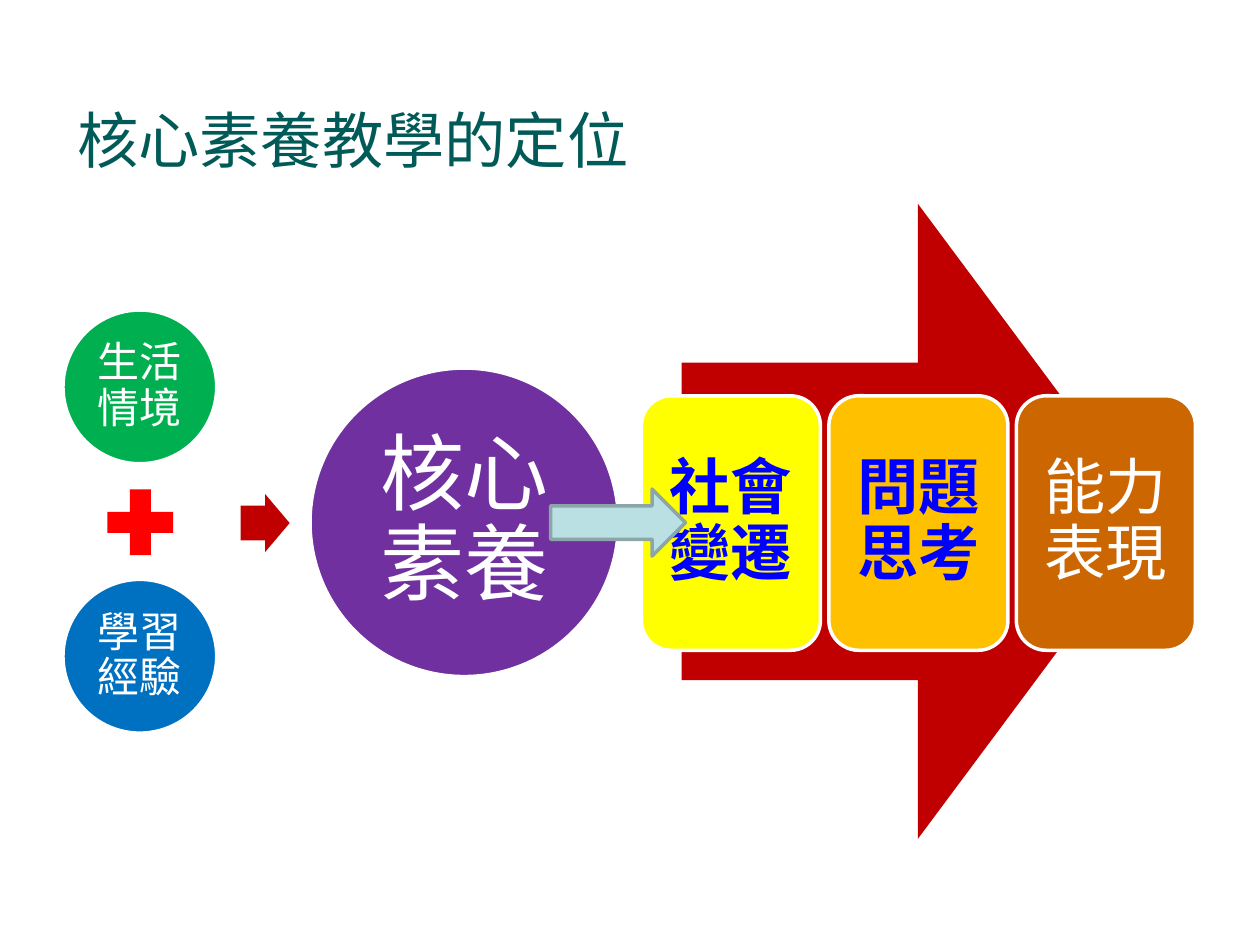
from pptx import Presentation
from pptx.dml.color import RGBColor
from pptx.enum.shapes import MSO_SHAPE
from pptx.enum.text import MSO_ANCHOR, PP_ALIGN
from pptx.util import Cm, Pt

OVAL = MSO_SHAPE.OVAL
ARROW = MSO_SHAPE.RIGHT_ARROW
PLUS = MSO_SHAPE.MATH_PLUS
CARD = MSO_SHAPE.ROUNDED_RECTANGLE
MIDDLE = MSO_ANCHOR.MIDDLE
LEFT, CENTER = PP_ALIGN.LEFT, PP_ALIGN.CENTER


def color(value):
    return RGBColor.from_string(value)


def add_shape(kind, x, y, w, h, fill, line=None, text="", size=24,
              inset=0.08, font_color="FFFFFF", bold=False):
    sp = s.shapes.add_shape(kind, Cm(x), Cm(y), Cm(w), Cm(h))
    sp.shadow.inherit = False
    sp.fill.solid()
    sp.fill.fore_color.rgb = color(fill)
    if line:
        sp.line.color.rgb = color(line)
        sp.line.width = Pt(2)
    else:
        sp.line.fill.background()
    if text:
        tf = sp.text_frame
        tf.word_wrap = True
        tf.vertical_anchor = MIDDLE
        tf.margin_left = tf.margin_right = Cm(inset)
        tf.margin_top = tf.margin_bottom = Cm(inset)
        p = tf.paragraphs[0]
        p.text = text
        p.alignment = CENTER
        p.line_spacing = 0.9
        p.font.name = "Arial"
        p.font.size = Pt(size)
        p.font.bold = bold
        p.font.color.rgb = color(font_color)
    return sp


prs = Presentation()
prs.slide_width, prs.slide_height = Cm(25.4), Cm(19.05)
s = prs.slides.add_slide(prs.slide_layouts[5])

title = s.shapes.title
title.left, title.top, title.width, title.height = Cm(1.3), Cm(1.93), Cm(22.86), Cm(1.75)
title.text_frame.vertical_anchor = MIDDLE
p = title.text_frame.paragraphs[0]
p.text = "核心素養教學的定位"
p.alignment = LEFT
p.font.name = "Arial"
p.font.size = Pt(35)
p.font.color.rgb = color("005A58")

for y, fill, text in [(6.25, "00B050", "生活情境"), (11.68, "0070C0", "學習經驗")]:
    add_shape(OVAL, 1.27, y, 3.1, 3.1, fill, "FFFFFF", text)
add_shape(PLUS, 1.93, 9.63, 1.8, 1.8, "FF0000")
small_arrow = add_shape(ARROW, 4.85, 9.96, 0.99, 1.17, "C00000")
small_arrow.adjustments[0] = 0.6
add_shape(OVAL, 6.25, 7.42, 6.22, 6.22, "7030A0", "FFFFFF", "核心素養", 48, 0.18)

add_shape(ARROW, 13.74, 4.11, 9.53, 12.8, "C00000")
cards = [
    ("社會變遷", "FFFF00", "0000FF", True),
    ("問題思考", "FFC000", "0000FF", True),
    ("能力表現", "CC6600", "FFFFFF", False),
]
for i, (text, fill, font_color, bold) in enumerate(cards):
    add_shape(CARD, 12.93 + 3.78 * i, 7.98, 3.61, 5.13, fill, "FFFFFF",
              text, 35, 0.36, font_color, bold)

add_shape(ARROW, 11.1, 9.86, 2.72, 1.35, "BBE0E3", "8AA6A8")

prs.save("out.pptx")
